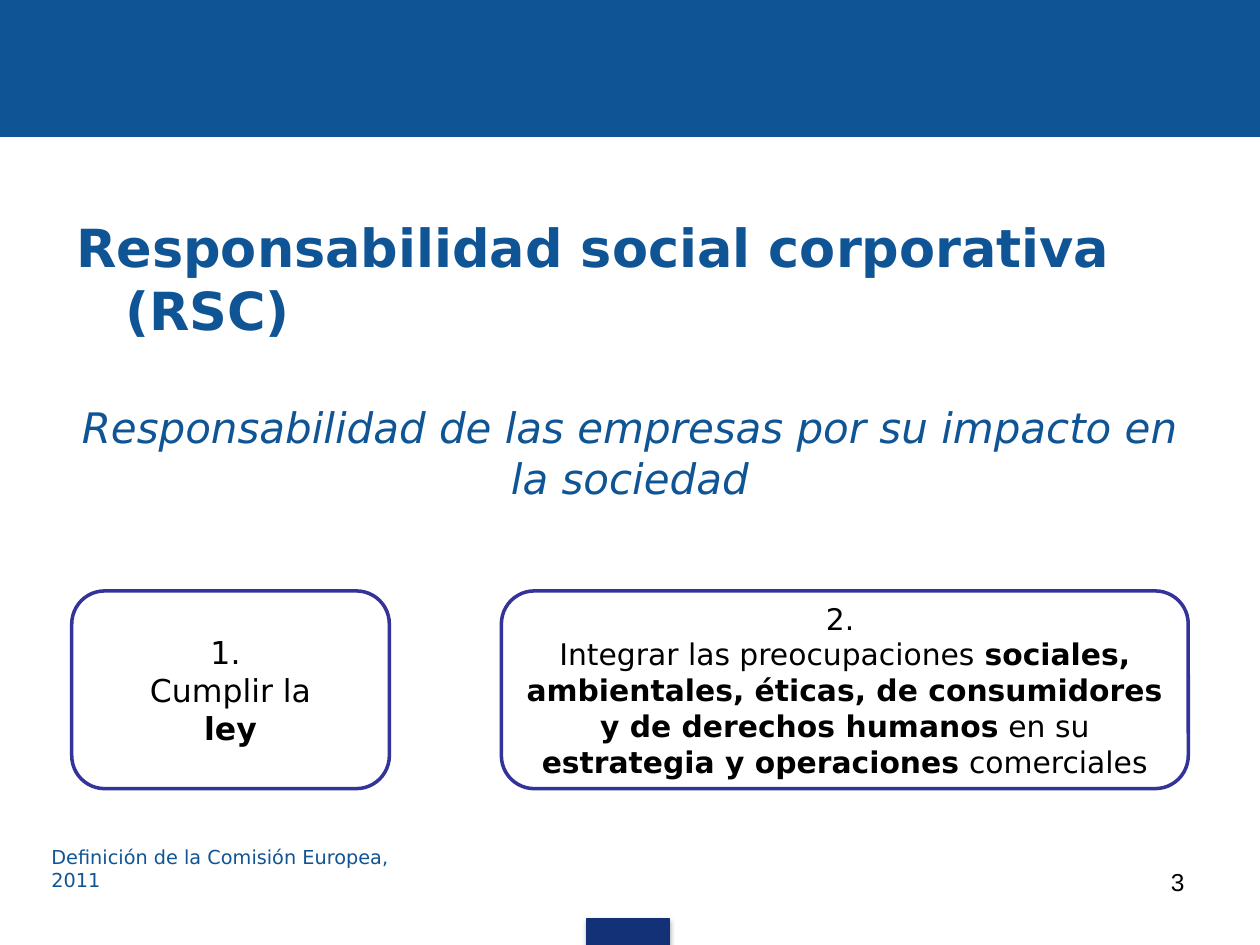
from dataclasses import dataclass
from typing import Optional

from lxml import etree
from pptx import Presentation
from pptx.dml.color import RGBColor
from pptx.enum.shapes import MSO_SHAPE
from pptx.enum.text import MSO_ANCHOR, PP_ALIGN
from pptx.oxml.ns import qn
from pptx.util import Pt

RECT, ROUNDED = MSO_SHAPE.RECTANGLE, MSO_SHAPE.ROUNDED_RECTANGLE
LEFT, CENTER, RIGHT = PP_ALIGN.LEFT, PP_ALIGN.CENTER, PP_ALIGN.RIGHT
TOP, MIDDLE = MSO_ANCHOR.TOP, MSO_ANCHOR.MIDDLE

BLUE = RGBColor(0x0F, 0x54, 0x94)
NAVY = RGBColor(0x13, 0x31, 0x76)
INDIGO = RGBColor(0x33, 0x33, 0x99)
BLACK = RGBColor(0, 0, 0)
WHITE = RGBColor(255, 255, 255)

FONT = "DejaVu Sans"
BREAK = "\n"


@dataclass
class Area:
    left: float
    top: float
    width: float
    height: float

    def lengths(self) -> tuple:
        return tuple(Pt(v) for v in (self.left, self.top, self.width, self.height))


@dataclass
class Style:
    size: float
    color: RGBColor = BLUE
    font: str = FONT
    bold: Optional[bool] = None
    italic: Optional[bool] = None
    align: PP_ALIGN = LEFT
    anchor: MSO_ANCHOR = TOP
    hanging: float = 0


@dataclass
class Card:
    area: Area
    size: float
    paragraphs: list  # each a list of (text, bold) runs


def write(tf, paragraphs: list, style: Style) -> None:
    tf.word_wrap = True
    tf.vertical_anchor = style.anchor
    for i, runs in enumerate(paragraphs):
        p = tf.add_paragraph() if i else tf.paragraphs[0]
        p.alignment = style.align
        if style.hanging:
            pPr = p._p.get_or_add_pPr()
            pPr.set("marL", str(Pt(style.hanging)))
            pPr.set("indent", str(-Pt(style.hanging)))
        p.font.name, p.font.size = style.font, Pt(style.size)
        p.font.bold, p.font.italic = style.bold, style.italic
        p.font.color.rgb = style.color
        for text, bold in runs:
            if text == BREAK:
                p.add_line_break()
                continue
            r = p.add_run()
            r.text = text
            if bold:
                r.font.bold = True


def add_box(s, kind: MSO_SHAPE, area: Area, fill: RGBColor, line: RGBColor, weight: float):
    sp = s.shapes.add_shape(kind, *area.lengths())
    sp.shadow.inherit = False
    sp.fill.solid()
    sp.fill.fore_color.rgb = fill
    sp.line.color.rgb = line
    sp.line.width = Pt(weight)
    return sp


def add_text(s, area: Area, text: str, style: Style) -> None:
    sp = s.shapes.add_textbox(*area.lengths())
    write(sp.text_frame, [[(text, False)]], style)


def add_card(s, card: Card) -> None:
    sp = add_box(s, ROUNDED, card.area, WHITE, INDIGO, 2)
    write(sp.text_frame, card.paragraphs,
          Style(card.size, BLACK, align=CENTER, anchor=MIDDLE))


def add_shadow(sp, blur: float, dist: float, opacity: int) -> None:
    effects = sp._element.spPr.find(qn("a:effectLst"))
    shadow = etree.SubElement(effects, qn("a:outerShdw"), blurRad=str(Pt(blur)),
                              dist=str(Pt(dist)), dir="5400000", rotWithShape="0")
    color = etree.SubElement(shadow, qn("a:srgbClr"), val="000000")
    etree.SubElement(color, qn("a:alpha"), val=str(opacity * 1000))


CARD_TOP, CARD_HEIGHT = 337.7, 113
CARDS = [
    Card(Area(41, CARD_TOP, 181.5, CARD_HEIGHT), 18, [
        [("1. ", False)],
        [("Cumplir la", False), (BREAK, False), ("ley", True)],
    ]),
    Card(Area(286.5, CARD_TOP, 392.5, CARD_HEIGHT), 17, [
        [("2. ", False)],
        [("Integrar las preocupaciones ", False),
         ("sociales, ambientales, éticas, de consumidores y de derechos humanos", True),
         (" en su ", False),
         ("estrategia y operaciones", True),
         (" comerciales", False)],
    ]),
]


def main() -> None:
    prs = Presentation()
    prs.slide_width, prs.slide_height = Pt(720), Pt(540)
    s = prs.slides.add_slide(prs.slide_layouts[6])

    # Header band and bottom tab
    add_box(s, RECT, Area(0, 0, 720, 77.8), BLUE, BLUE, 0.75)
    tab = add_box(s, RECT, Area(335.5, 525, 47, 15.5), NAVY, NAVY, 0.75)
    add_shadow(tab, 3.1, 1.8, 35)

    # Title and definition
    add_text(s, Area(36.5, 122.4, 648, 73.4), "Responsabilidad social corporativa (RSC)",
             Style(30, bold=True, anchor=MIDDLE, hanging=28))
    add_text(s, Area(36, 226, 648, 73.4),
             "Responsabilidad de las empresas por su impacto en la sociedad",
             Style(24, italic=True, align=CENTER))

    # Two parts of the responsibility
    for card in CARDS:
        add_card(s, card)

    # Attribution and page number
    add_text(s, Area(22.3, 479.5, 232.5, 21), "Definición de la Comisión Europea, 2011", Style(11))
    add_text(s, Area(516.2, 491.8, 167.8, 37.4), "3",
             Style(14, BLACK, "Arial", align=RIGHT))

    prs.save("out.pptx")


if __name__ == "__main__":
    main()
